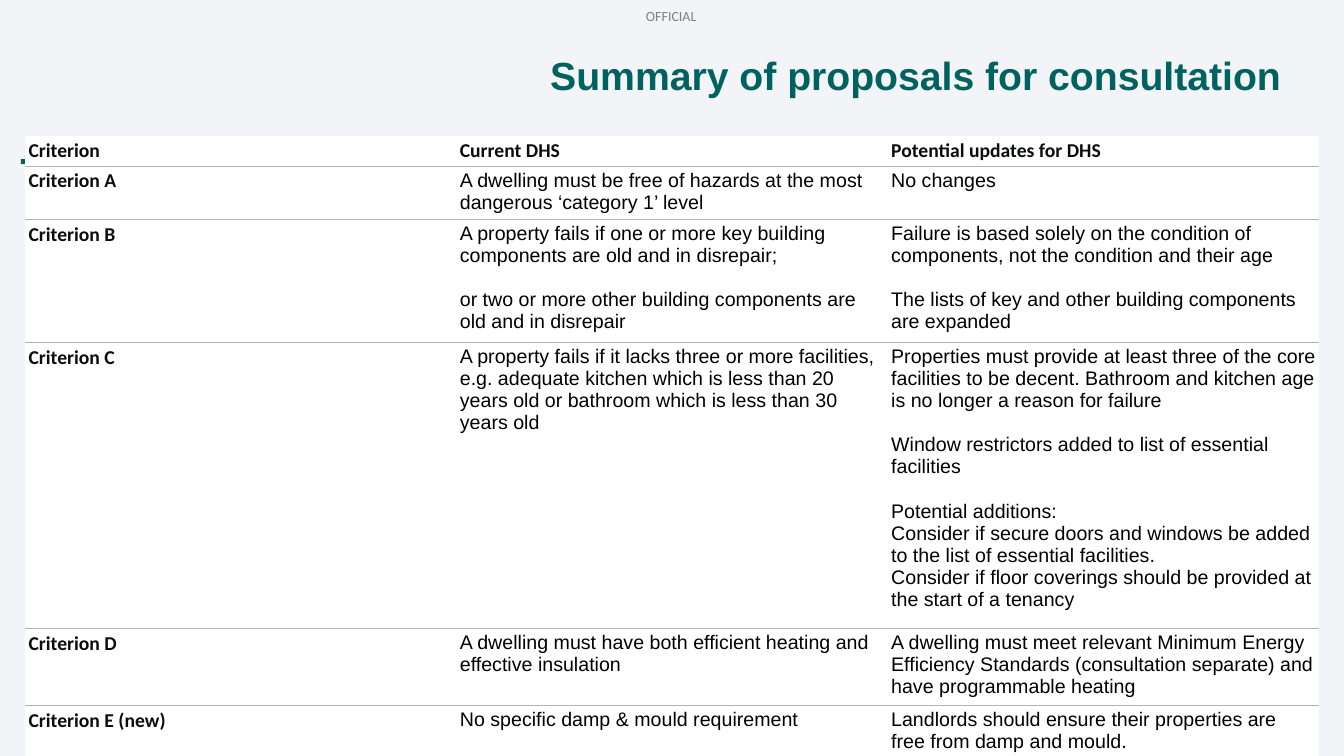
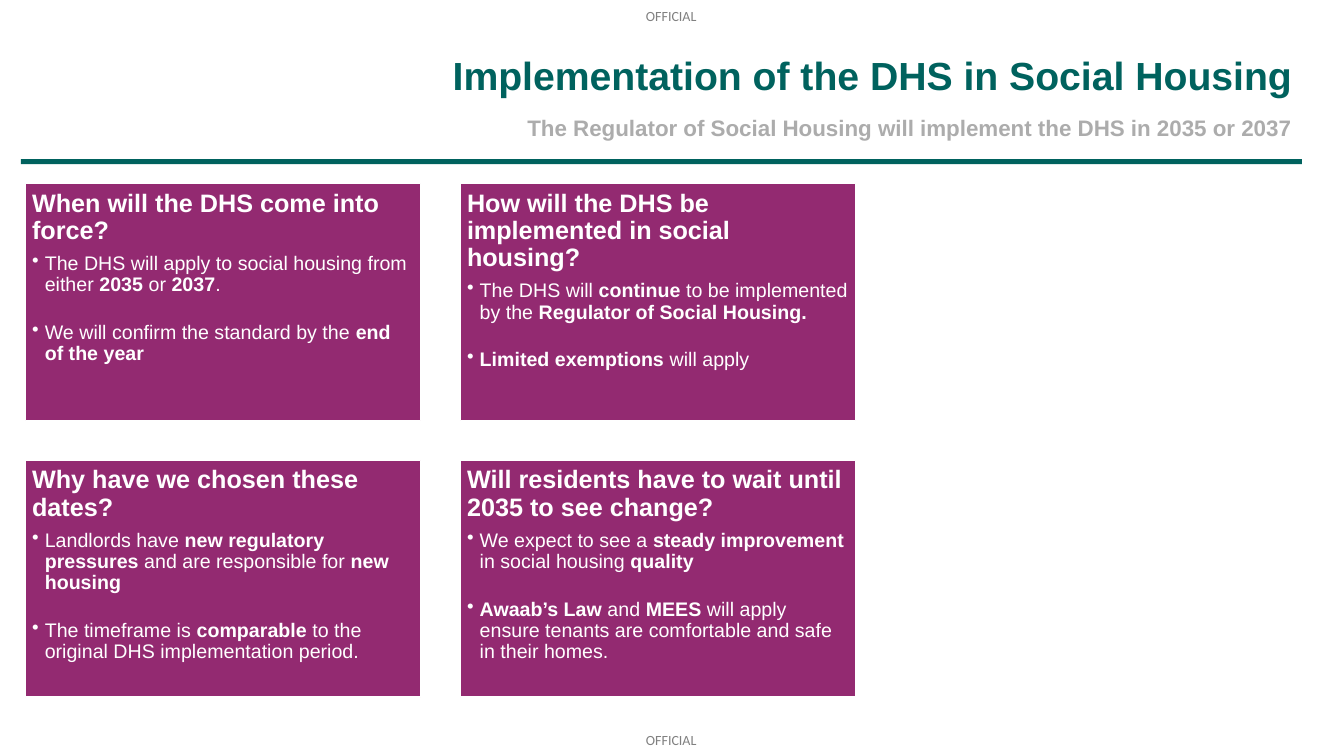
"""Build two slides on the Decent Homes Standard consultation."""
import dataclasses

import lxml.etree
import pptx
import pptx.dml.color
import pptx.enum.shapes
import pptx.enum.text
import pptx.oxml.ns
import pptx.util
from pptx.util import Cm

ALIGN = pptx.enum.text.PP_ALIGN
ANCHOR = pptx.enum.text.MSO_ANCHOR
RECTANGLE = pptx.enum.shapes.MSO_SHAPE.RECTANGLE
qn = pptx.oxml.ns.qn


@dataclasses.dataclass(frozen=True)
class Theme:
    teal: str = "00625E"
    plum: str = "932A71"
    white: str = "FFFFFF"
    mist: str = "F2F4F7"
    black: str = "000000"
    ink: str = "0B0C0C"
    silver: str = "ACACAC"
    marking: str = "808080"
    border: str = "B1B4B6"
    body_font: str = "Arial"
    label_font: str = "Calibri"
    title_size: float = 28
    heading_size: float = 18
    subtitle_size: float = 16
    body_size: float = 14
    marking_size: float = 10
    tight: float = 0.9
    no_grid: str = "{2D5ABB26-0587-4C30-8999-92F81FD0307C}"


def rgb(color):
    return pptx.dml.color.RGBColor.from_string(color)


def paint(target, color):
    target.fill.solid()
    target.fill.fore_color.rgb = rgb(color)


def set_margins(target, left, top, right, bottom):
    target.margin_left, target.margin_top = Cm(left), Cm(top)
    target.margin_right, target.margin_bottom = Cm(right), Cm(bottom)


def write(frame, text, *, size, color, font, bold=False, align=ALIGN.LEFT,
          spacing=1.0, before=0, after=0, bullet=None):
    first = not frame.text
    para = frame.paragraphs[0] if first else frame.add_paragraph()
    if bullet:
        properties = para._p.get_or_add_pPr()
        properties.set("marL", str(Cm(0.32)))
        properties.set("indent", str(-Cm(0.32)))
        lxml.etree.SubElement(properties, qn("a:buChar")).set("char", bullet)
    para.alignment = align
    para.line_spacing = spacing
    para.space_before = pptx.util.Pt(0 if first else before)
    para.space_after = pptx.util.Pt(after)
    for index, part in enumerate(text.split("*")):
        if part:
            span = para.add_run()
            span.text = part
            span.font.name = font
            span.font.size = pptx.util.Pt(size)
            span.font.bold = bold or index % 2 == 1
            span.font.color.rgb = rgb(color)


def draw_border(cell, side, color):
    properties = cell._tc.get_or_add_tcPr()
    line = lxml.etree.Element(qn("a:" + side), w=str(pptx.util.Pt(0.75)))
    fill = lxml.etree.SubElement(line, qn("a:solidFill"))
    lxml.etree.SubElement(fill, qn("a:srgbClr")).set("val", color)
    position = len(properties.findall(qn("a:lnT")))
    properties.insert(position, line)


class SlideBuilder:
    def __init__(self, theme):
        self.theme = theme
        self.deck = pptx.Presentation()
        self.deck.slide_width = Cm(33.87)
        self.deck.slide_height = Cm(19.05)
        self.page = None

    def start_page(self, background, marking_tops):
        self.page = self.deck.slides.add_slide(self.deck.slide_layouts[6])
        paint(self.page.background, background)
        for top in marking_tops:
            self.text_box("OFFICIAL", 16.28, top, 1.35, 0.43, wrap=False,
                          size=self.theme.marking_size,
                          color=self.theme.marking,
                          font=self.theme.label_font)
        self.rectangle(0.53, 4.01, 32.28, 0.13, self.theme.teal)

    def text_box(self, text, left, top, width, height, wrap=True,
                 anchor=ANCHOR.TOP, **style):
        box = self.page.shapes.add_textbox(
            Cm(left), Cm(top), Cm(width), Cm(height))
        frame = box.text_frame
        frame.word_wrap = wrap
        frame.vertical_anchor = anchor
        set_margins(frame, 0, 0, 0, 0)
        write(frame, text, **style)

    def rectangle(self, left, top, width, height, color, outline=None):
        box = self.page.shapes.add_shape(
            RECTANGLE, Cm(left), Cm(top), Cm(width), Cm(height))
        box.shadow.inherit = False
        paint(box, color)
        if outline:
            box.line.color.rgb = rgb(outline)
            box.line.width = pptx.util.Pt(1)
        else:
            box.line.fill.background()
        return box

    def title(self, text, right):
        self.text_box(text, 8.92, 0.33, right - 8.92, 2.16,
                      anchor=ANCHOR.BOTTOM, size=self.theme.title_size,
                      color=self.theme.teal, font=self.theme.body_font,
                      bold=True, align=ALIGN.RIGHT, spacing=self.theme.tight)

    def subtitle(self, text):
        self.text_box(text, 0.53, 2.95, 32.03, 0.61,
                      size=self.theme.subtitle_size, color=self.theme.silver,
                      font=self.theme.body_font, bold=True,
                      align=ALIGN.RIGHT, spacing=self.theme.tight)

    def card(self, left, top, width, height, heading, points):
        box = self.rectangle(left, top, width, height, self.theme.plum,
                             outline=self.theme.white)
        frame = box.text_frame
        frame.word_wrap = True
        frame.vertical_anchor = ANCHOR.TOP
        set_margins(frame, 0.17, 0.17, 0.17, 0.17)
        style = dict(color=self.theme.white, font=self.theme.body_font,
                     spacing=self.theme.tight)
        write(frame, heading, size=self.theme.heading_size, bold=True,
              after=6.3, **style)
        for index, point in enumerate(points):
            write(frame, point, size=self.theme.body_size, bullet="•",
                  before=19 if index else 0, **style)

    def table(self, left, top, column_width, row_heights, rows):
        columns = len(rows[0])
        frame = self.page.shapes.add_table(
            len(rows), columns, Cm(left), Cm(top),
            Cm(column_width * columns), Cm(sum(row_heights)))
        grid = frame.table
        grid.first_row = grid.horz_banding = False
        grid._tbl.tblPr.find(qn("a:tableStyleId")).text = self.theme.no_grid
        for column in grid.columns:
            column.width = Cm(column_width)
        for row_index, (height, row) in enumerate(zip(row_heights, rows)):
            grid.rows[row_index].height = Cm(height)
            for column_index, content in enumerate(row):
                self.fill_cell(grid.cell(row_index, column_index), content,
                               label=row_index == 0 or column_index == 0,
                               top_line=row_index > 0)

    def fill_cell(self, cell, content, label, top_line):
        theme = self.theme
        paint(cell, theme.white)
        set_margins(cell, 0.08, 0.08, 0.08, 0.08)
        if top_line:
            draw_border(cell, "lnT", theme.border)
        draw_border(cell, "lnB", theme.border)
        for block in content.split("\n\n"):
            for index, text in enumerate(block.split("\n")):
                write(cell.text_frame, text, size=theme.body_size,
                      color=theme.ink if label else theme.black,
                      font=theme.label_font if label else theme.body_font,
                      bold=label, before=0 if index else 16)


PROPOSAL_HEIGHTS = [0.72, 1.3, 3.05, 7.11, 1.88, 1.3]
PROPOSALS = [
    ("Criterion", "Current DHS", "Potential updates for DHS"),
    ("Criterion A",
     "A dwelling must be free of hazards at the most dangerous "
     "‘category 1’ level",
     "No changes"),
    ("Criterion B",
     "A property fails if one or more key building components are old and "
     "in disrepair;\n\nor two or more other building components are old and "
     "in disrepair",
     "Failure is based solely on the condition of components, not the "
     "condition and their age\n\nThe lists of key and other building "
     "components are expanded"),
    ("Criterion C",
     "A property fails if it lacks three or more facilities, e.g. adequate "
     "kitchen which is less than 20 years old or bathroom which is less than "
     "30 years old",
     "Properties must provide at least three of the core facilities to be "
     "decent. Bathroom and kitchen age is no longer a reason for failure\n\n"
     "Window restrictors added to list of essential facilities\n\n"
     "Potential additions:\nConsider if secure doors and windows be added to "
     "the list of essential facilities.\nConsider if floor coverings should "
     "be provided at the start of a tenancy"),
    ("Criterion D",
     "A dwelling must have both efficient heating and effective insulation",
     "A dwelling must meet relevant Minimum Energy Efficiency Standards "
     "(consultation separate) and have programmable heating"),
    ("Criterion E (new)",
     "No specific damp & mould requirement",
     "Landlords should ensure their properties are free from damp and "
     "mould."),
]

QUESTIONS = [
    ("When will the DHS come into force?",
     ["The DHS will apply to social housing from either *2035* or *2037*.",
      "We will confirm the standard by the *end of the year*"]),
    ("How will the DHS be implemented in social housing?",
     ["The DHS will *continue* to be implemented by the "
      "*Regulator of Social Housing.*",
      "*Limited exemptions *will apply"]),
    ("Why have we chosen these dates?",
     ["Landlords have *new regulatory pressures *and are responsible for "
      "*new housing*",
      "The timeframe is *comparable *to the original DHS implementation "
      "period."]),
    ("Will residents have to wait until 2035 to see change?",
     ["We expect to see a *steady improvement *in social housing *quality*",
      "*Awaab’s Law* and *MEES* will apply ensure tenants are comfortable "
      "and safe in their homes."]),
]


def main():
    theme = Theme()
    builder = SlideBuilder(theme)

    builder.start_page(theme.mist, marking_tops=[0.18])
    builder.title("Summary of proposals for consultation", right=32.28)
    builder.table(0.64, 3.43, 10.87, PROPOSAL_HEIGHTS, PROPOSALS)

    builder.start_page(theme.white, marking_tops=[0.18, 18.44])
    builder.title("Implementation of the DHS in Social Housing", right=32.56)
    builder.subtitle("The Regulator of Social Housing will implement the DHS "
                     "in 2035 or 2037")
    width, height, gap = 9.96, 5.97, 1
    for index, (heading, points) in enumerate(QUESTIONS):
        row, column = divmod(index, 2)
        builder.card(0.64 + column * (width + gap),
                     4.63 + row * (height + gap),
                     width, height, heading, points)

    builder.deck.save("out.pptx")


if __name__ == "__main__":
    main()
